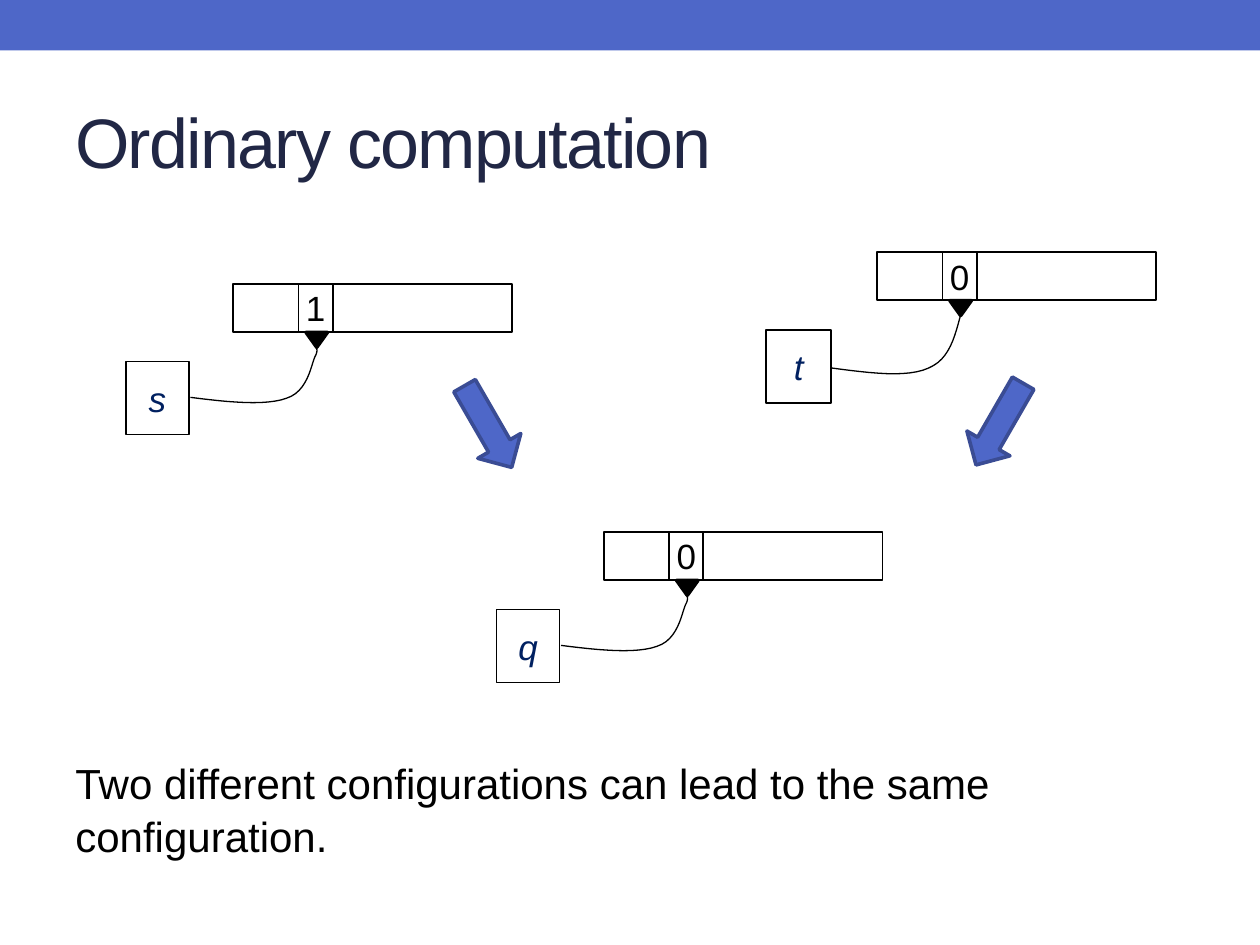
"""Build a slide showing two machine configurations leading to the same one."""
from pptx import Presentation
from pptx.dml.color import RGBColor
from pptx.enum.shapes import MSO_SHAPE
from pptx.enum.text import MSO_ANCHOR, PP_ALIGN
from pptx.util import Cm, Pt


def style(shape, fill, line, width):
    shape.shadow.inherit = False
    if fill:
        shape.fill.solid()
        shape.fill.fore_color.rgb = RGBColor.from_string(fill)
    else:
        shape.fill.background()
    if line:
        shape.line.color.rgb = RGBColor.from_string(line)
        shape.line.width = Pt(width)
    else:
        shape.line.fill.background()


def write(shape, text, size, color, inset_x=0.25, inset_y=0.13):
    frame = shape.text_frame
    frame.word_wrap = True
    frame.margin_left = frame.margin_right = Cm(inset_x)
    frame.margin_top = frame.margin_bottom = Cm(inset_y)
    frame.text = text
    para = frame.paragraphs[0]
    span = para.runs[0]
    span.font.name = "Arial"
    span.font.size = Pt(size)
    span.font.color.rgb = RGBColor.from_string(color)
    return para, span


deck = Presentation()
deck.slide_width = Cm(25.4)
deck.slide_height = Cm(19.05)
page = deck.slides.add_slide(deck.slide_layouts[6])
shapes = page.shapes

banner = shapes.add_shape(MSO_SHAPE.RECTANGLE, 0, 0, deck.slide_width, Cm(1.02))
style(banner, "4E67C8", None, 0)

title = shapes.add_textbox(Cm(1.27), Cm(1.47), Cm(22.86), Cm(2.74))
para, span = write(title, "Ordinary computation", 40, "212745")
title.text_frame.vertical_anchor = MSO_ANCHOR.MIDDLE
span.font._element.set("spc", "-100")

body = shapes.add_textbox(Cm(1.27), Cm(15.09), Cm(22.86), Cm(3))
sentence = "Two different configurations can lead to the same configuration."
para, span = write(body, sentence, 24, "000000")
para.space_before = Pt(6)
para.line_spacing = 1.05

long_wire = [(-0.86, 2.29), (-0.1, 2.39), (0.66, 2.46), (1.07, 2.31), (1.5, 2.18),
             (1.57, 1.65), (1.65, 1.47), (1.75, 1.3), (1.63, 1.24), (1.63, 1.24)]
short_wire = [(-0.91, 2.34), (-0.15, 2.44), (0.61, 2.54), (1.04, 2.34),
              (1.47, 2.16), (1.57, 1.7), (1.7, 1.22)]
machines = [
    ("s", "1", 4.7, 5.72, -2.16, 1.27, long_wire),
    ("q", "0", 12.17, 10.72, -2.16, 1.27, long_wire),
    ("t", "0", 17.68, 5.08, -2.24, 1.32, short_wire),
]
tape_cells = [(0, 1.32), (1.32, 0.69), (2.01, 3.61)]
steps = 12

for state, symbol, left, top, state_offset, state_width, wire in machines:
    for offset, width in tape_cells:
        cell = shapes.add_shape(MSO_SHAPE.RECTANGLE, Cm(left + offset), Cm(top),
                                Cm(width), Cm(0.97))
        style(cell, None, "000000", 1)
        if offset == 1.32:
            para, span = write(cell, symbol, 20, "000000", 0, 0.05)
            para.alignment = PP_ALIGN.CENTER

    state_box = shapes.add_shape(MSO_SHAPE.RECTANGLE, Cm(left + state_offset),
                                 Cm(top + 1.57), Cm(state_width), Cm(1.47))
    style(state_box, None, "000000", 1)
    para, span = write(state_box, state, 20, "002060", 0.3, 0.3)
    para.alignment = PP_ALIGN.CENTER
    span.font.italic = True

    head = shapes.add_shape(MSO_SHAPE.ISOSCELES_TRIANGLE, Cm(left + 1.47),
                            Cm(top + 0.98), Cm(0.43), Cm(0.3))
    head.rotation = 180
    style(head, "000000", "000000", 2.08)

    points = []
    for first in range(0, len(wire) - 1, 3):
        controls = list(zip(*wire[first:first + 4]))
        for step in range(1, steps + 1):
            t = step / steps
            weights = ((1 - t) ** 3, 3 * t * (1 - t) ** 2, 3 * t * t * (1 - t), t ** 3)
            x, y = (sum(w * c for w, c in zip(weights, axis)) for axis in controls)
            points.append((Cm(left + x), Cm(top + y)))
    builder = shapes.build_freeform(Cm(left + wire[0][0]), Cm(top + wire[0][1]))
    builder.add_line_segments(points, close=False)
    style(builder.convert_to_shape(), None, "000000", 0.75)

for left, top, angle in [(8.89, 8.1, 60), (19.2, 8.05, 120)]:
    arrow = shapes.add_shape(MSO_SHAPE.RIGHT_ARROW, Cm(left), Cm(top), Cm(1.9), Cm(1))
    arrow.rotation = angle
    style(arrow, "4E67C8", "3A4C94", 2.08)

deck.save("out.pptx")
